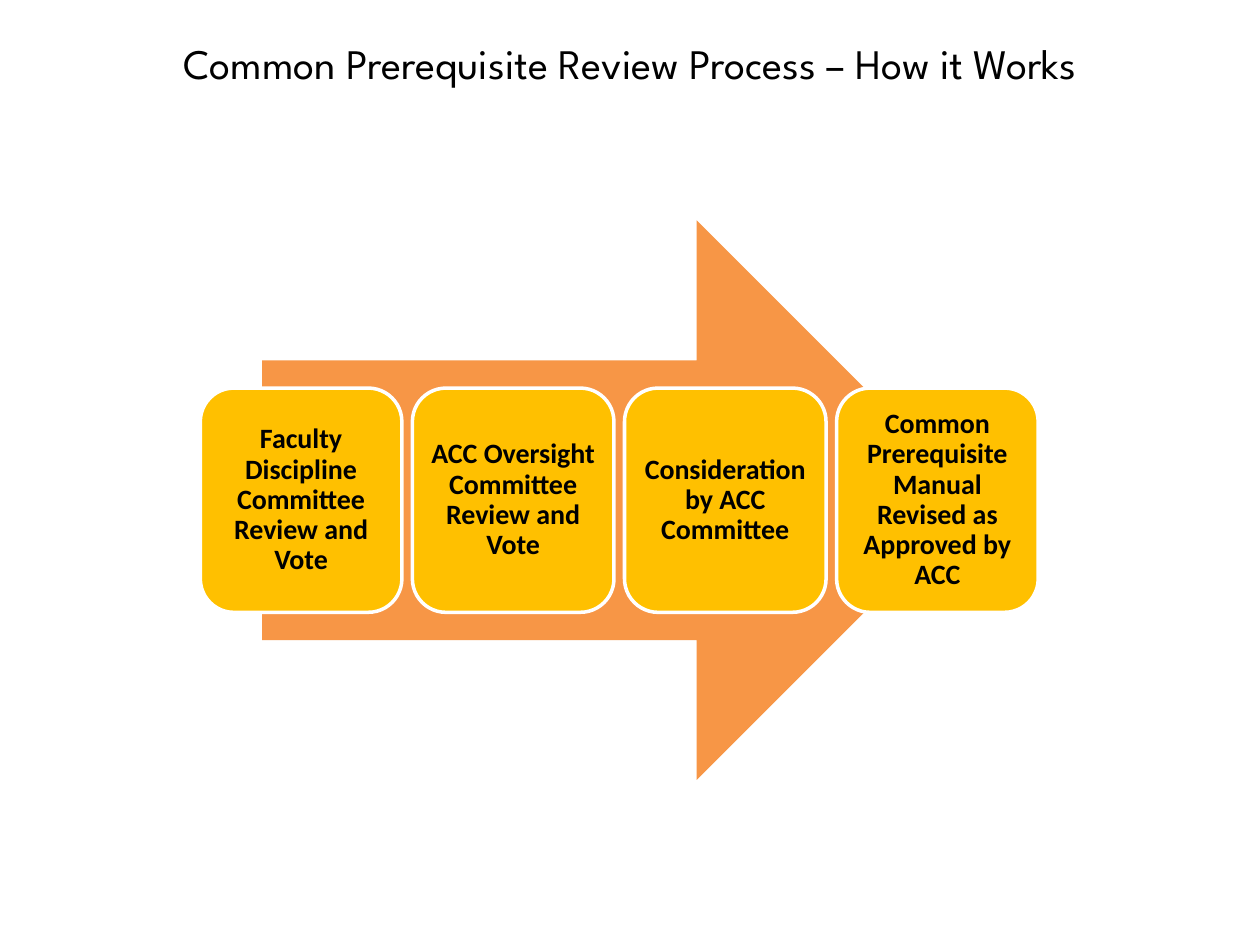
from pptx import Presentation
from pptx.dml.color import RGBColor
from pptx.enum import shapes, text
from pptx.util import Inches, Pt

STEPS = [
    "Faculty Discipline Committee Review and Vote",
    "ACC Oversight Committee Review and Vote",
    "Consideration by ACC Committee",
    "Common Prerequisite Manual Revised as Approved by ACC",
]
TITLE_FONT = {"name": "League Spartan", "size": Pt(24), "bold": False}
STEP_FONT = {"name": "Calibri", "size": Pt(16), "bold": True}
# The rounded corners already inset the text, so the margins stay just below zero
STEP_FRAME = {
    "word_wrap": True,
    "vertical_anchor": text.MSO_ANCHOR.MIDDLE,
    "margin_left": Inches(-0.01),
    "margin_right": Inches(-0.01),
    "margin_top": 0,
    "margin_bottom": 0,
}


def color(value):
    return RGBColor.from_string(value)


def set_attributes(target, values):
    for name, value in values.items():
        setattr(target, name, value)


def write_text(frame, words, font, line_spacing=1.0):
    frame.text = words
    paragraph = frame.paragraphs[0]
    paragraph.alignment = text.PP_ALIGN.CENTER
    paragraph.line_spacing = line_spacing
    set_attributes(paragraph.runs[0].font, font)
    paragraph.runs[0].font.color.rgb = color("000000")


def add_filled_shape(parent, kind, box, fill):
    shape = parent.shapes.add_shape(kind, *box)
    shape.shadow.inherit = False
    shape.fill.solid()
    shape.fill.fore_color.rgb = color(fill)
    shape.line.fill.background()
    return shape


def place_title(slide, left, top, width, height):
    title = slide.shapes.title
    set_attributes(title, {"left": left, "top": top, "width": width, "height": height})
    title.text_frame.vertical_anchor = text.MSO_ANCHOR.MIDDLE
    write_text(title.text_frame, "Common Prerequisite Review Process – How it Works", TITLE_FONT)


def place_process(slide, left, top, width, height):
    group = slide.shapes.add_group_shape()

    # Arrow behind the steps, centred in the box
    arrow_width = Inches(5.67)
    arrow_left = left + (width - arrow_width) // 2
    add_filled_shape(group, shapes.MSO_SHAPE.RIGHT_ARROW,
                     (arrow_left, top, arrow_width, height), "F79646")

    # Equal steps spread across the box
    step_width, step_height = Inches(1.6), Inches(1.78)
    pitch = (width - step_width) // (len(STEPS) - 1)
    step_top = top + (height - step_height) // 2
    for index, words in enumerate(STEPS):
        box = (left + index * pitch, step_top, step_width, step_height)
        step = add_filled_shape(group, shapes.MSO_SHAPE.ROUNDED_RECTANGLE, box, "FFC000")
        step.line.color.rgb = color("FFFFFF")
        step.line.width = Pt(2)
        set_attributes(step.text_frame, STEP_FRAME)
        write_text(step.text_frame, words, STEP_FONT, line_spacing=0.9)


def main():
    presentation = Presentation()
    presentation.slide_width, presentation.slide_height = Inches(10), Inches(7.5)
    slide = presentation.slides.add_slide(presentation.slide_layouts[5])
    place_title(slide, Inches(0.5), Inches(0), Inches(9), Inches(1))
    place_process(slide, Inches(1.59), Inches(1.75), Inches(6.65), Inches(4.44))
    presentation.save("out.pptx")


if __name__ == "__main__":
    main()
